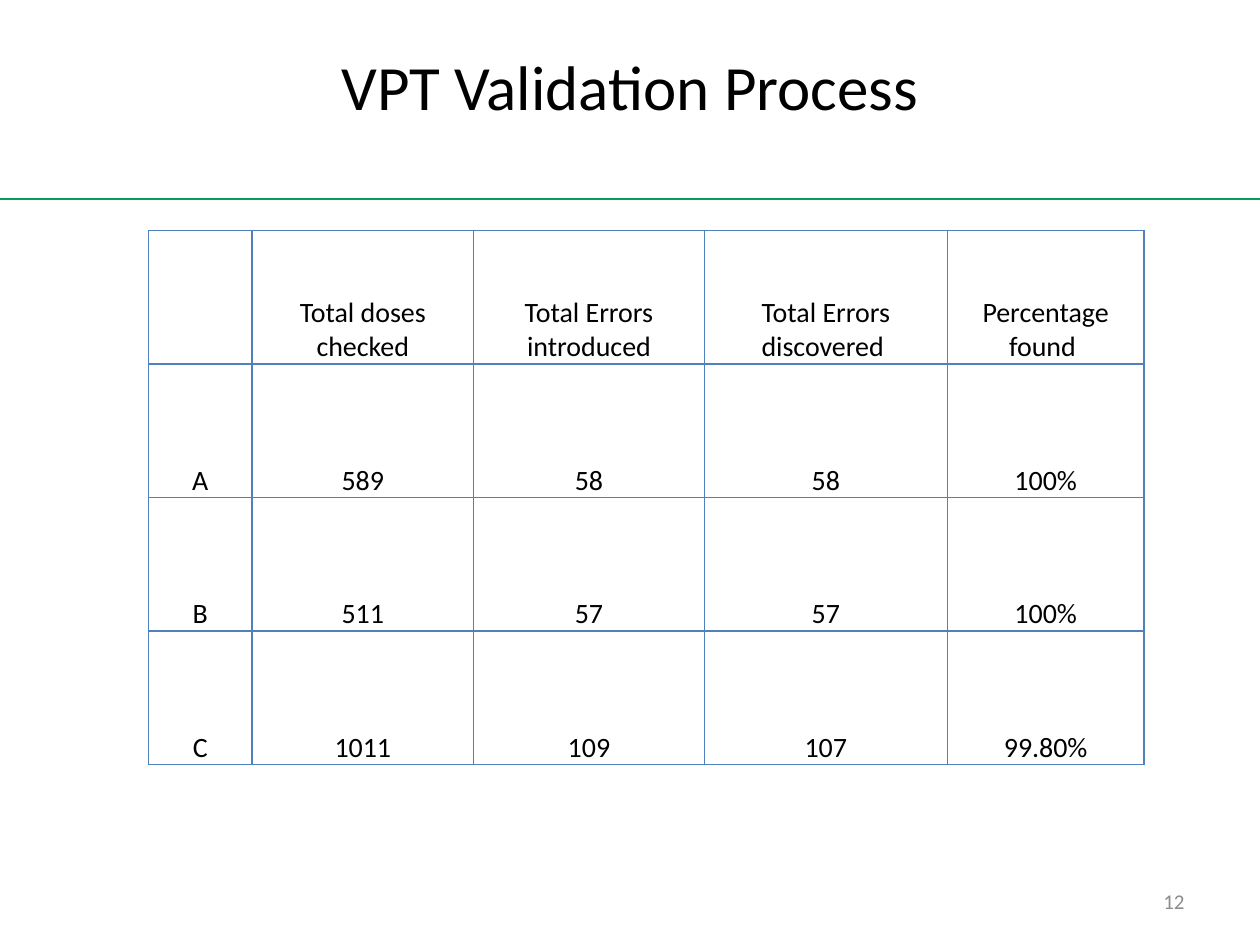
from lxml.etree import SubElement
from pptx import Presentation
from pptx.dml.color import RGBColor
from pptx.enum.shapes import MSO_CONNECTOR
from pptx.enum.text import MSO_ANCHOR, PP_ALIGN
from pptx.oxml.ns import qn
from pptx.util import Inches, Pt

BLACK = RGBColor(0x00, 0x00, 0x00)
GRAY = RGBColor(0x8C, 0x8C, 0x8C)
GREEN = RGBColor(0x03, 0x9F, 0x55)
BLUE = RGBColor(0x4F, 0x81, 0xBD)
FONT = "Calibri"

TITLE = "VPT Validation Process"
PAGE_NUMBER = "12"
RESULTS = [
    ["", "Total doses checked", "Total Errors introduced",
     "Total Errors discovered ", "Percentage found "],
    ["A", "589", "58", "58", "100%"],
    ["B", "511", "57", "57", "100%"],
    ["C", "1011", "109", "107", "99.80%"],
]
COLUMN_WIDTHS = [0.82, 1.76, 1.83, 1.93, 1.56]
ROW_HEIGHT = 1.06
TABLE_LEFT, TABLE_TOP = 1.18, 1.83
SLIDE_WIDTH, SLIDE_HEIGHT = 10, 7.5
MARGIN = 0.05 * SLIDE_WIDTH
RULE_TOP = 1.58


def write(frame, text, size, color, align):
    para = frame.paragraphs[0]
    para.alignment = align
    span = para.add_run()
    span.text = text
    span.font.name = FONT
    span.font.size = Pt(size)
    span.font.color.rgb = color


def add_label(page, left, top, width, height, text, size, color, align, bottom=0.05):
    box = page.shapes.add_textbox(*map(Inches, (left, top, width, height)))
    frame = box.text_frame
    frame.word_wrap = True
    frame.vertical_anchor = MSO_ANCHOR.MIDDLE
    frame.margin_bottom = Inches(bottom)
    write(frame, text, size, color, align)


def add_rule(page):
    rule = page.shapes.add_connector(
        MSO_CONNECTOR.STRAIGHT, 0, Inches(RULE_TOP), Inches(SLIDE_WIDTH), Inches(RULE_TOP))
    rule.line.color.rgb = GREEN
    rule.line.width = Pt(1)
    SubElement(rule._element.spPr, qn("a:effectLst"))


def set_borders(cell):
    properties = cell._tc.get_or_add_tcPr()
    for position, side in enumerate(("a:lnL", "a:lnR", "a:lnT", "a:lnB")):
        line = properties.makeelement(qn(side), {"w": str(Pt(1))})
        fill = SubElement(line, qn("a:solidFill"))
        SubElement(fill, qn("a:srgbClr"), val=str(BLUE))
        properties.insert(position, line)


def add_results(page):
    rows, columns = len(RESULTS), len(COLUMN_WIDTHS)
    table = page.shapes.add_table(
        rows, columns, Inches(TABLE_LEFT), Inches(TABLE_TOP),
        Inches(sum(COLUMN_WIDTHS)), Inches(rows * ROW_HEIGHT)).table
    table.first_row = table.horz_banding = False
    for column, width in zip(table.columns, COLUMN_WIDTHS):
        column.width = Inches(width)
    for row, values in zip(table.rows, RESULTS):
        row.height = Inches(ROW_HEIGHT)
        for cell, value in zip(row.cells, values):
            cell.fill.background()
            set_borders(cell)
            cell.vertical_anchor = MSO_ANCHOR.BOTTOM
            cell.margin_left = cell.margin_right = 0
            cell.margin_top = cell.margin_bottom = 0
            if value:
                write(cell.text_frame, value, 16, BLACK, PP_ALIGN.CENTER)


def main():
    deck = Presentation()
    deck.slide_width, deck.slide_height = Inches(SLIDE_WIDTH), Inches(SLIDE_HEIGHT)
    page = deck.slides.add_slide(deck.slide_layouts[6])
    add_label(page, MARGIN, 0.3, SLIDE_WIDTH - 2 * MARGIN, 1.25,
              TITLE, 36, BLACK, PP_ALIGN.CENTER, bottom=0.55)
    number_width = 2.33
    add_label(page, SLIDE_WIDTH - MARGIN - number_width, 6.95, number_width, 0.4,
              PAGE_NUMBER, 12, GRAY, PP_ALIGN.RIGHT)
    add_rule(page)
    add_results(page)
    deck.save("out.pptx")


if __name__ == "__main__":
    main()
